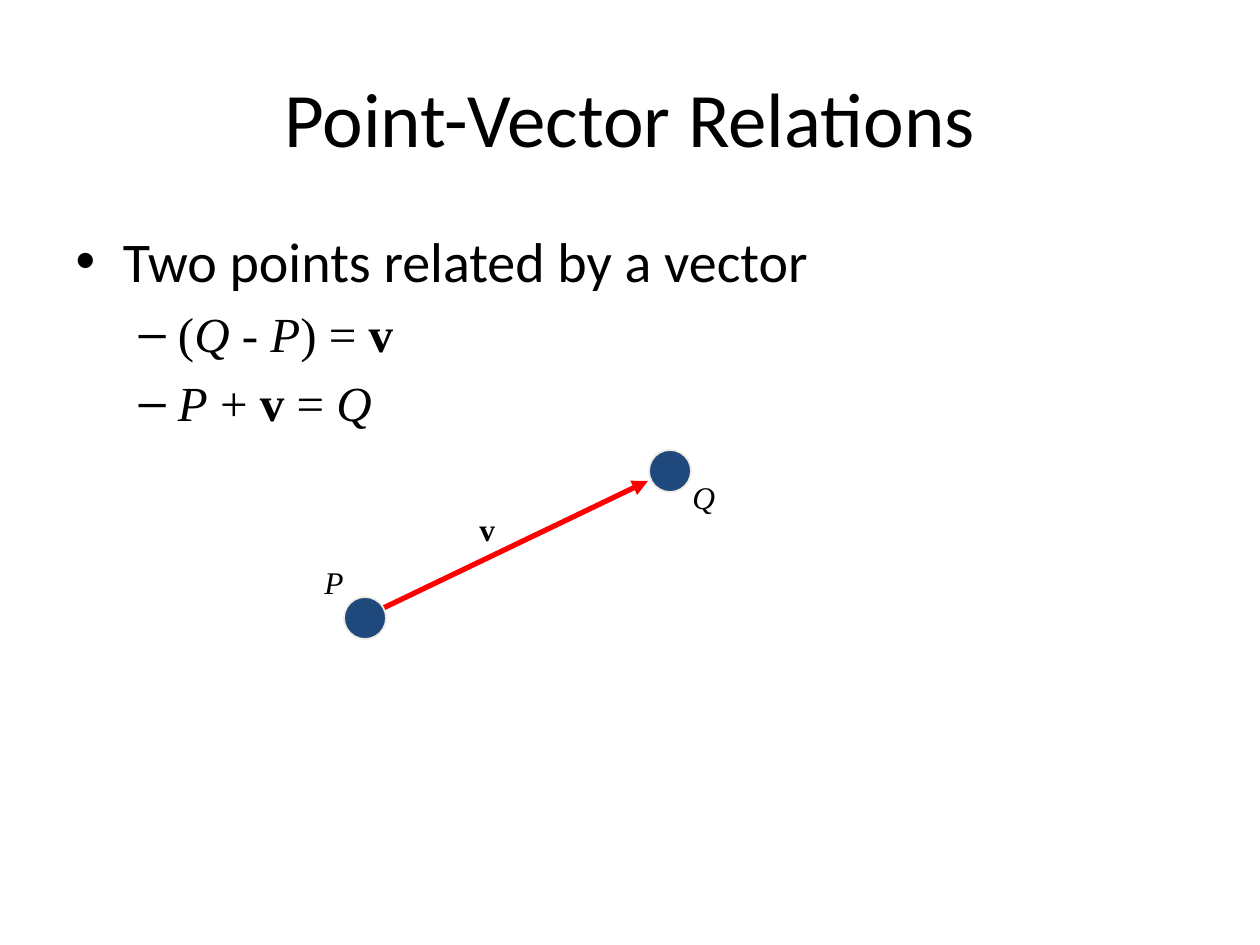
from lxml.etree import SubElement
from pptx import Presentation
from pptx.dml.color import RGBColor
from pptx.enum.shapes import MSO_CONNECTOR, MSO_SHAPE
from pptx.enum.text import MSO_ANCHOR, MSO_AUTO_SIZE, PP_ALIGN
from pptx.oxml.ns import qn
from pptx.util import Emu, Pt

BLACK = RGBColor(0x00, 0x00, 0x00)
NAVY = RGBColor(0x1F, 0x49, 0x7D)
CREAM = RGBColor(0xEE, 0xEC, 0xE1)
RED = RGBColor(0xFF, 0x00, 0x00)
SANS = "Calibri"
SERIF = "Times New Roman"
POINT_SIZE = 42


def px(length):
    return Emu(round(length * 914400 / 126))


def place(shape, box):
    shape.left, shape.top, shape.width, shape.height = map(px, box)


def add_text(paragraph, text, size, font=SERIF, bold=False, italic=False):
    run = paragraph.add_run()
    run.text = text
    run.font.name = font
    run.font.size = Pt(size)
    run.font.bold = bold
    run.font.italic = italic
    run.font.color.rgb = BLACK


def add_title(slide, box):
    title = slide.shapes.title
    place(title, box)
    title.text_frame.vertical_anchor = MSO_ANCHOR.MIDDLE
    paragraph = title.text_frame.paragraphs[0]
    paragraph.alignment = PP_ALIGN.CENTER
    add_text(paragraph, "Point-Vector Relations", 44, font=SANS)


def add_relations(slide, box):
    body = slide.placeholders[1]
    place(body, box)
    frame = body.text_frame
    add_text(frame.paragraphs[0], "Two points related by a vector", 32, font=SANS)
    italic, bold = {"italic": True}, {"bold": True}
    equations = [
        [("(", {}), ("Q ", italic), ("- ", {}), ("P", italic), (") = ", {}), ("v", bold)],
        [("P", italic), (" + ", {}), ("v", bold), (" = ", {}), ("Q", italic)],
    ]
    for equation in equations:
        paragraph = frame.add_paragraph()
        paragraph.level = 1
        for text, style in equation:
            add_text(paragraph, text, 28, **style)


def add_vector(slide, start, end):
    vector = slide.shapes.add_connector(MSO_CONNECTOR.STRAIGHT, *map(px, start + end))
    vector.line.color.rgb = RED
    vector.line.width = Pt(3)
    properties = vector.line._get_or_add_ln()
    SubElement(properties, qn("a:tailEnd"), type="triangle")
    SubElement(vector._element.spPr, qn("a:effectLst"))


def add_point(slide, left, top):
    point = slide.shapes.add_shape(
        MSO_SHAPE.OVAL, *map(px, (left, top, POINT_SIZE, POINT_SIZE))
    )
    point.shadow.inherit = False
    point.fill.solid()
    point.fill.fore_color.rgb = NAVY
    point.line.color.rgb = CREAM
    point.line.width = Pt(1)


def add_label(slide, text, box, **style):
    label = slide.shapes.add_textbox(*map(px, box))
    label.text_frame.word_wrap = False
    label.text_frame.auto_size = MSO_AUTO_SIZE.SHAPE_TO_FIT_TEXT
    add_text(label.text_frame.paragraphs[0], text, 18, **style)


def add_diagram(slide, left, top):
    add_vector(slide, (left + 63, top + 162), (left + 336, top + 31))
    add_point(slide, left + 32, top + 147)
    add_point(slide, left + 337, top)
    add_label(slide, "v", (left + 155, top + 54, 42, 50), bold=True)
    add_label(slide, "Q", (left + 368, top + 22, 48, 50), italic=True)
    add_label(slide, "P", (left, top + 107, 44, 50), italic=True)


def main():
    presentation = Presentation()
    presentation.slide_width = px(1260)
    presentation.slide_height = px(945)
    slide = presentation.slides.add_slide(presentation.slide_layouts[1])
    add_title(slide, (63, 38, 1134, 158))
    add_relations(slide, (63, 220, 1134, 624))
    add_diagram(slide, 312, 450)
    presentation.save("out.pptx")


if __name__ == "__main__":
    main()
